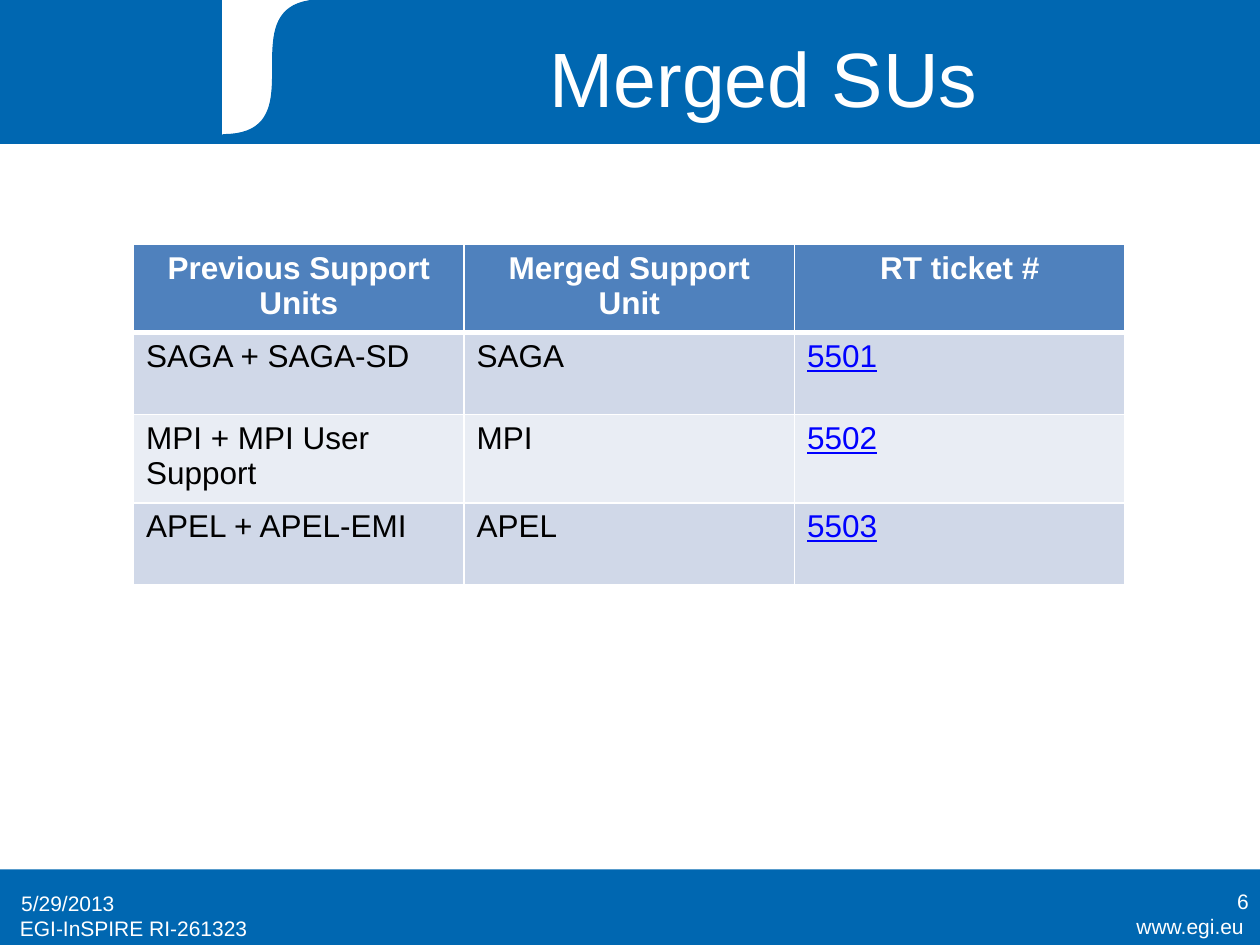
from lxml import etree
from pptx import Presentation
from pptx.dml.color import RGBColor
from pptx.enum.shapes import MSO_SHAPE as SHAPE
from pptx.enum.text import MSO_ANCHOR as ANCHOR, PP_ALIGN as ALIGN
from pptx.oxml.ns import qn
from pptx.util import Inches, Pt

BLUE, WHITE, BLACK, LINK = "0067B1", "FFFFFF", "000000", "0000FF"
HEADER, BANDS = "4F81BD", ("D0D8E8", "E9EDF4")
ROWS = [
    ("Previous Support Units", "Merged Support Unit", "RT ticket #"),
    ("SAGA + SAGA-SD", "SAGA", "5501"),
    ("MPI + MPI User Support", "MPI", "5502"),
    ("APEL + APEL-EMI", "APEL", "5503"),
]


def rgb(color):
    return RGBColor.from_string(color)


def paint(s, fill, line=None):
    s.shadow.inherit = False
    s.fill.solid()
    s.fill.fore_color.rgb = rgb(fill)
    if line:
        s.line.color.rgb = rgb(line)
        s.line.width = Pt(0.75)
    else:
        s.line.fill.background()


def add_rect(slide, x, y, w, h, fill, line=None):
    s = slide.shapes.add_shape(SHAPE.RECTANGLE, Inches(x), Inches(y), Inches(w), Inches(h))
    paint(s, fill, line)


def add_swoosh(slide, left, right, bottom, reach, steps=40):
    """Blue panel whose left edge is an S-curve from the bottom to the top."""
    points = [(right, bottom)]
    for i in range(steps + 1):
        t = i / steps
        u = 1 - t
        bend = 3 * u * u * t + t ** 3
        rise = 3 * u * t * t + t ** 3
        points.append((left + reach * bend, bottom * (1 - rise)))
    builder = slide.shapes.build_freeform(Inches(right), 0)
    builder.add_line_segments([(Inches(x), Inches(y)) for x, y in points], close=True)
    paint(builder.convert_to_shape(), BLUE, BLUE)


def write(tf, text, size, color, align=ALIGN.LEFT, bold=False, underline=False):
    p = tf.paragraphs[0]
    p.alignment = align
    r = p.add_run()
    r.text = text
    r.font.name = "Arial"
    r.font.size = Pt(size)
    r.font.color.rgb = rgb(color)
    r.font.bold = bold
    r.font.underline = underline


def add_text(slide, x, y, w, h, text, size=12, align=ALIGN.LEFT, anchor=ANCHOR.MIDDLE):
    tf = slide.shapes.add_textbox(Inches(x), Inches(y), Inches(w), Inches(h)).text_frame
    tf.word_wrap = True
    tf.vertical_anchor = anchor
    write(tf, text, size, WHITE, align)


def set_borders(cell, **widths):
    """Cell borders come before the fill in the cell properties."""
    props = cell._tc.get_or_add_tcPr()
    for i, side in enumerate("LRTB"):
        ln = etree.Element(qn(f"a:ln{side}"), w=str(Pt(widths.get(side, 1))))
        fill = etree.SubElement(ln, qn("a:solidFill"))
        etree.SubElement(fill, qn("a:srgbClr"), val=WHITE)
        props.insert(i, ln)


def add_units_table(slide, x, y, w, row_h):
    n_rows, n_cols = len(ROWS), len(ROWS[0])
    table = slide.shapes.add_table(n_rows, n_cols, Inches(x), Inches(y),
                                   Inches(w), Inches(row_h * n_rows)).table
    table.horz_banding = False
    for i, row in enumerate(ROWS):
        for j, text in enumerate(row):
            cell = table.cell(i, j)
            cell.fill.solid()
            if i == 0:
                cell.fill.fore_color.rgb = rgb(HEADER)
                write(cell.text_frame, text, 18, WHITE, ALIGN.CENTER, bold=True)
            else:
                ticket = j == n_cols - 1
                cell.fill.fore_color.rgb = rgb(BANDS[(i - 1) % 2])
                write(cell.text_frame, text, 18, LINK if ticket else BLACK, underline=ticket)
            # A thicker rule separates the header from the body
            set_borders(cell, B=3 if i == 0 else 1, T=3 if i == 1 else 1)


def main():
    prs = Presentation()
    prs.slide_width, prs.slide_height = Inches(10), Inches(7.5)
    slide = prs.slides.add_slide(prs.slide_layouts[6])

    # Footer and header bands
    add_rect(slide, 0, 6.9, 10, 0.6, BLUE)
    add_rect(slide, 0, 0, 10, 1.14, BLUE, BLUE)
    add_rect(slide, 1.77, 0, 1.97, 1.07, WHITE, WHITE)
    add_swoosh(slide, left=1.77, right=3.74, bottom=1.07, reach=0.79)

    # Footer texts
    add_text(slide, 8.39, 7.2, 1.58, 0.31, "www.egi.eu", align=ALIGN.RIGHT, anchor=ANCHOR.TOP)
    add_text(slide, 0.06, 7.22, 2.5, 0.31, "EGI-InSPIRE RI-261323", anchor=ANCHOR.TOP)
    add_text(slide, 0.07, 6.97, 2.33, 0.4, "5/29/2013")
    add_text(slide, 7.68, 6.95, 2.33, 0.4, "6", align=ALIGN.RIGHT)

    # Title and table
    add_text(slide, 2.32, 0.13, 7.48, 0.95, "Merged SUs", 44, ALIGN.CENTER)
    add_units_table(slide, 1.06, 1.94, 7.87, 0.65)

    prs.save("out.pptx")


if __name__ == "__main__":
    main()
